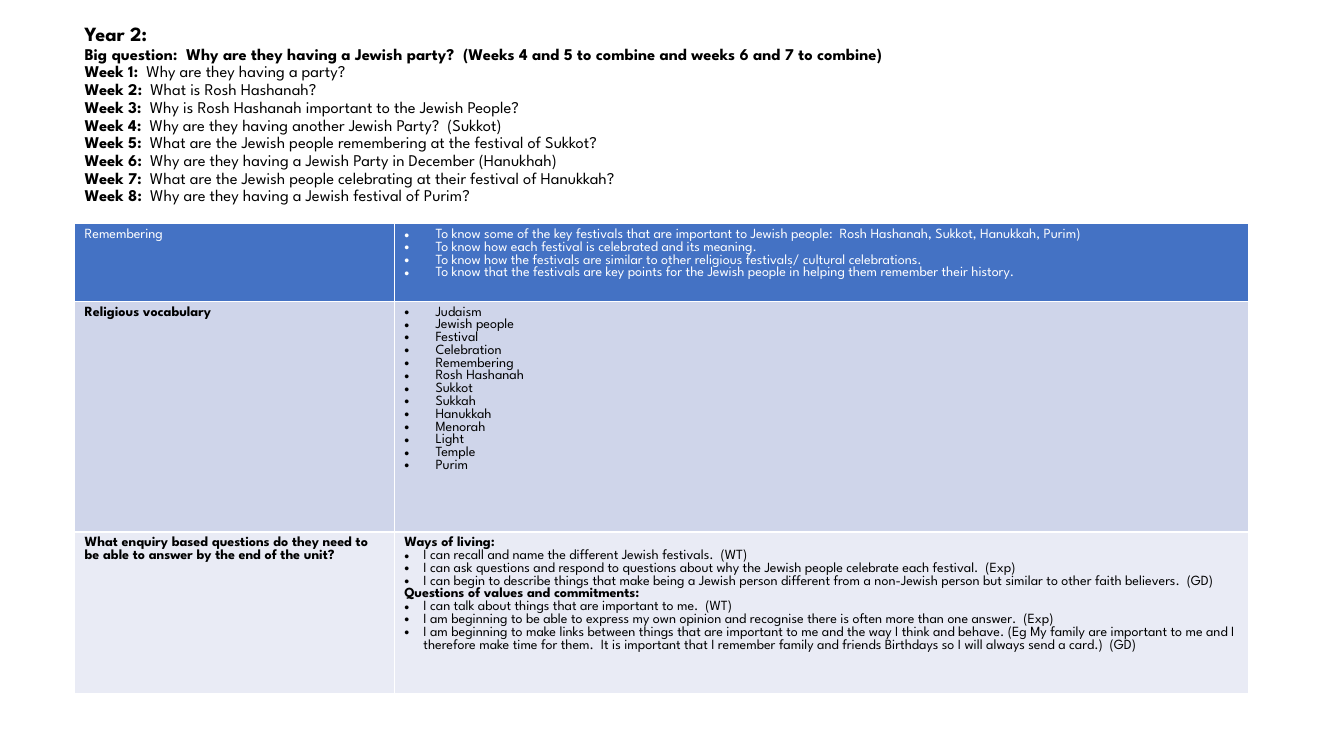
from lxml import etree
from pptx import Presentation
from pptx.dml.color import RGBColor
from pptx.oxml.ns import qn
from pptx.util import Inches, Pt

FONT = "League Spartan"
COLORS = {"header": "4472C4", "band1": "CFD5EA", "band2": "E9EBF5",
          "white": "FFFFFF", "black": "000000"}

HEADING = [
    ("Year 2:", ""),
    ("Big question:  Why are they having a Jewish party?  "
     "(Weeks 4 and 5 to combine and weeks 6 and 7 to combine)", ""),
    ("Week 1:", "  Why are they having a party?"),
    ("Week 2:", "  What is Rosh Hashanah?"),
    ("Week 3:", "  Why is Rosh Hashanah important to the Jewish People?"),
    ("Week 4:", "  Why are they having another Jewish Party?  (Sukkot)"),
    ("Week 5:", "  What are the Jewish people remembering at the festival of Sukkot?"),
    ("Week 6:", "  Why are they having a Jewish Party in December (Hanukhah)"),
    ("Week 7:", "  What are the Jewish people celebrating at their festival of Hanukkah?"),
    ("Week 8:", "  Why are they having a Jewish festival of Purim?"),
]

KNOWLEDGE = [
    "To know some of the key festivals that are important to Jewish people:  "
    "Rosh Hashanah, Sukkot, Hanukkah, Purim)",
    "To know how each festival is celebrated and its meaning.",
    "To know how the festivals are similar to other religious festivals/ cultural celebrations.",
    "To know that the festivals are key points for the Jewish people in helping them "
    "remember their history.",
]
VOCABULARY = ["Judaism", "Jewish people", "Festival", "Celebration", "Remembering",
              "Rosh Hashanah", "Sukkot", "Sukkah", "Hanukkah", "Menorah", "Light",
              "Temple", "Purim"]
SUBHEADS = ["Ways of living:", "Questions of values and commitments:"]
OUTCOMES = [
    SUBHEADS[0],
    "I can recall and name the different Jewish festivals.  (WT)",
    "I can ask questions and respond to questions about why the Jewish people "
    "celebrate each festival.  (Exp)",
    "I can begin to describe things that make being a Jewish person different from a "
    "non-Jewish person but similar to other faith believers.  (GD)",
    SUBHEADS[1],
    "I can talk about things that are important to me.  (WT)",
    "I am beginning to be able to express my own opinion and recognise there is often "
    "more than one answer.  (Exp)",
    "I am beginning to make links between things that are important to me and the way I "
    "think and behave. (Eg My family are important to me and I therefore make time for "
    "them.  It is important that I remember family and friends Birthdays so I will always "
    "send a card.)  (GD)",
]
# label, label bold, lines, bullet indent, fill, text colour, row height
ROWS = [
    ("Remembering", False, KNOWLEDGE, 0.31, "header", "white", 0.6),
    ("Religious vocabulary", True, VOCABULARY, 0.31, "band1", "black", 2.29),
    ("What enquiry based questions do they need to be able to answer by the end of the unit?",
     True, OUTCOMES, 0.19, "band2", "black", 1.24),
]


def style(font, size, color, bold):
    font.name, font.size, font.bold = FONT, Pt(size), bold
    font.color.rgb = RGBColor.from_string(COLORS[color])


def add_bullet(p, indent):
    pPr = p._p.get_or_add_pPr()
    pPr.set("marL", str(Inches(indent)))
    pPr.set("indent", str(-Inches(indent)))
    etree.SubElement(pPr, qn("a:buFont"), typeface="Arial")
    etree.SubElement(pPr, qn("a:buChar"), char="•")


prs = Presentation()
prs.slide_width, prs.slide_height = Inches(13.33), Inches(7.5)
s = prs.slides.add_slide(prs.slide_layouts[6])

# Unit heading and weekly questions
tf = s.shapes.add_textbox(Inches(0.74), Inches(0.23), Inches(10.11), Inches(1.9)).text_frame
tf.word_wrap = True
for i, (label, question) in enumerate(HEADING):
    p = tf.paragraphs[0] if i == 0 else tf.add_paragraph()
    p.line_spacing = Pt(12.65)
    for words, bold in ((label, True), (question, False)):
        if words:
            r = p.add_run()
            r.text = words
            style(r.font, 14.4 if i == 0 else 11.7, "black", bold)

# Knowledge, vocabulary and enquiry table
table = s.shapes.add_table(len(ROWS), 2, Inches(0.74), Inches(2.22),
                           Inches(11.64), Inches(4.13)).table
for column, width in zip(table.columns, (3.17, 8.47)):
    column.width = Inches(width)

for row, (label, label_bold, lines, indent, fill, color, height) in enumerate(ROWS):
    table.rows[row].height = Inches(height)
    for col, texts in enumerate(([label], lines)):
        cell = table.cell(row, col)
        cell.text_frame.text = "\n".join(texts)
        for p in cell.text_frame.paragraphs:
            subhead = p.text in SUBHEADS
            if col == 1 and not subhead:
                add_bullet(p, indent)
            style(p.runs[0].font, 10, color, label_bold if col == 0 else subhead)
        tcPr = cell._tc.get_or_add_tcPr()
        for side in ("a:lnL", "a:lnR", "a:lnT", "a:lnB"):
            ln = etree.SubElement(tcPr, qn(side), w=str(Pt(1)))
            line_fill = etree.SubElement(ln, qn("a:solidFill"))
            etree.SubElement(line_fill, qn("a:srgbClr"), val=COLORS["white"])
        cell.fill.solid()
        cell.fill.fore_color.rgb = RGBColor.from_string(COLORS[fill])

prs.save("out.pptx")
